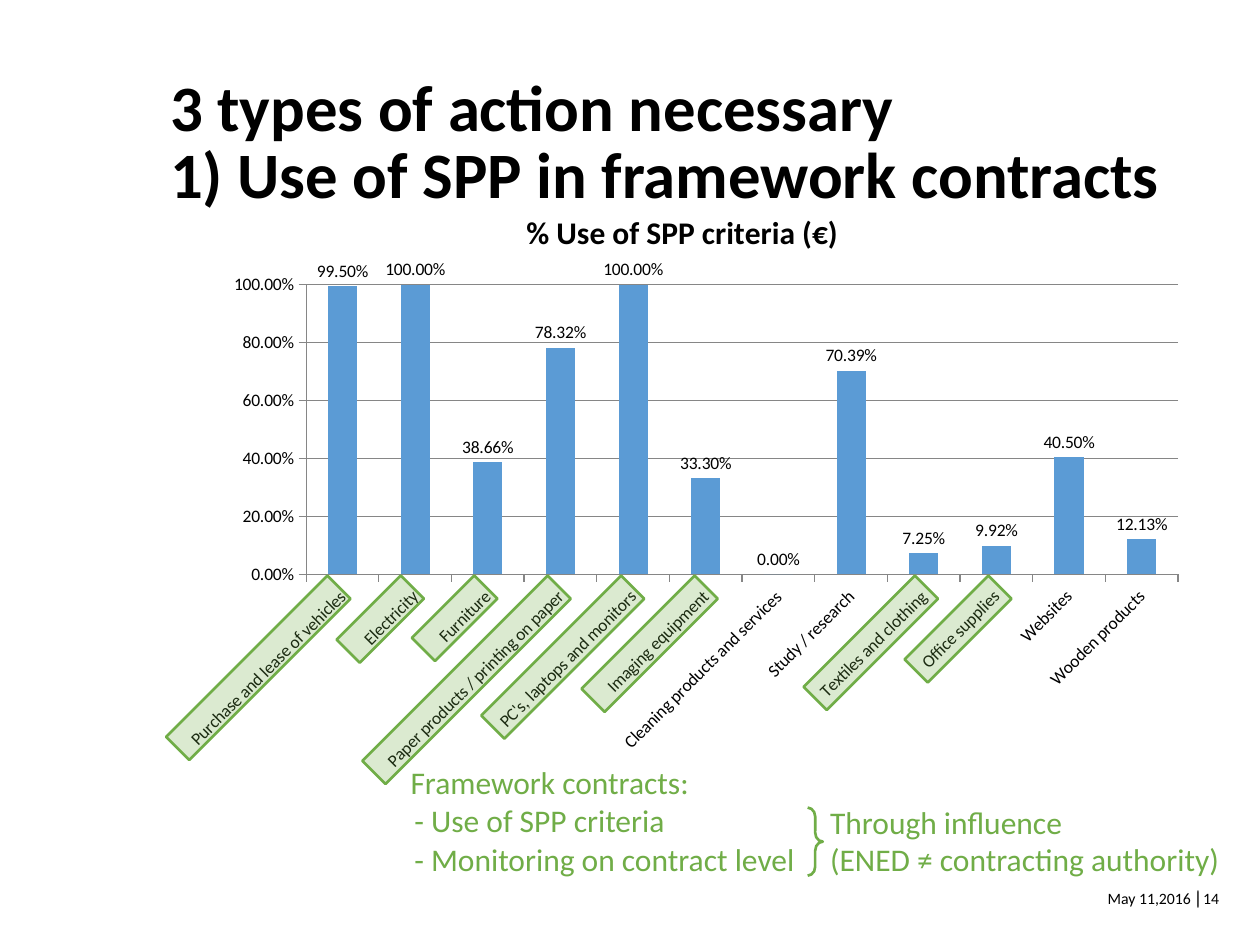
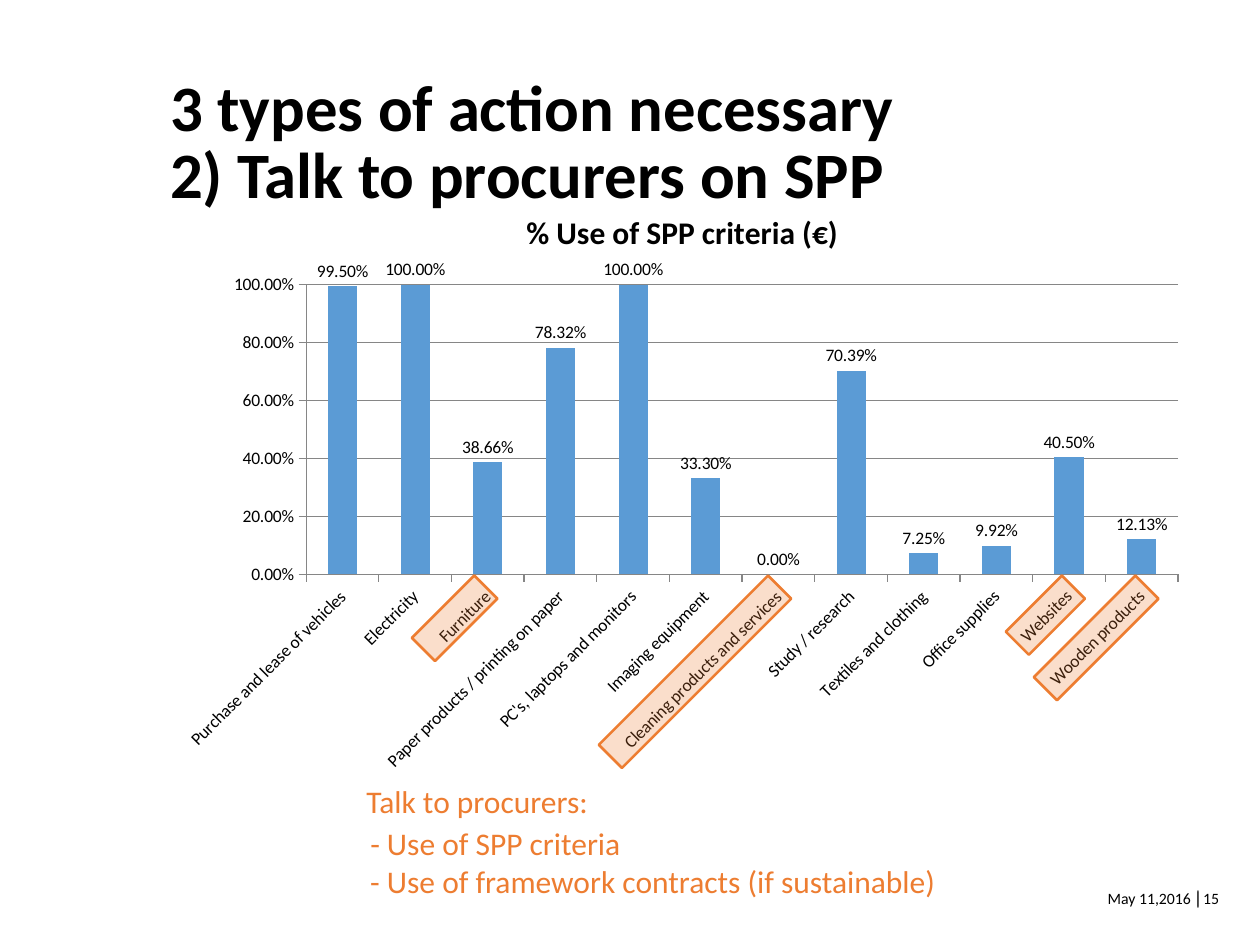
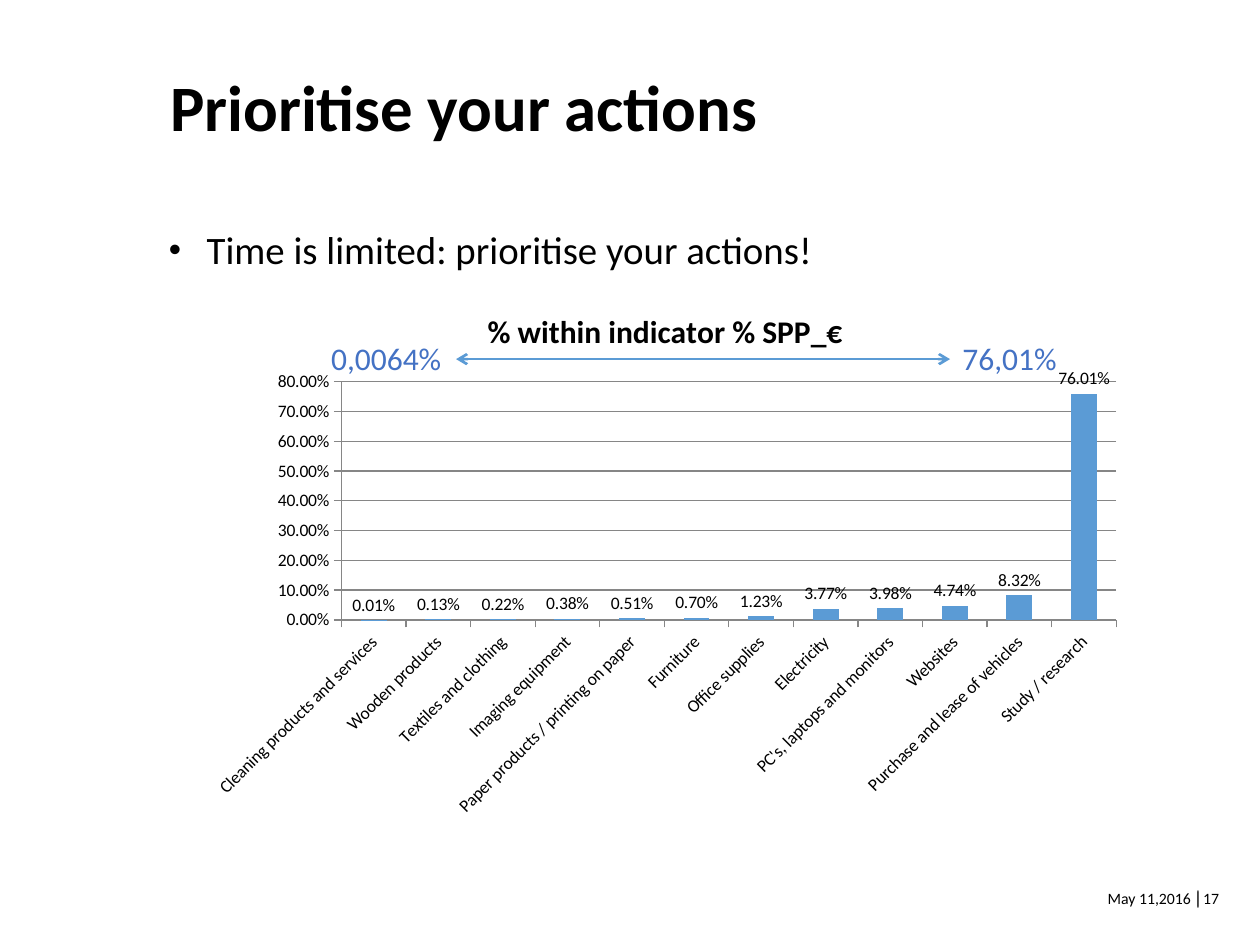
"""Build three slides on sustainable public procurement (SPP) actions."""
from math import sqrt

from lxml import etree
from pptx import Presentation
from pptx.chart.data import CategoryChartData
from pptx.dml.color import RGBColor
from pptx.enum.chart import XL_CHART_TYPE, XL_LABEL_POSITION, XL_TICK_MARK
from pptx.enum.shapes import MSO_CONNECTOR, MSO_SHAPE
from pptx.enum.text import MSO_ANCHOR, MSO_AUTO_SIZE, PP_ALIGN
from pptx.oxml import parse_xml
from pptx.oxml.ns import nsdecls, qn
from pptx.util import Inches, Pt

COLUMNS = XL_CHART_TYPE.COLUMN_CLUSTERED
OUTSIDE_END = XL_LABEL_POSITION.OUTSIDE_END
TICK_OUTSIDE = XL_TICK_MARK.OUTSIDE
STRAIGHT = MSO_CONNECTOR.STRAIGHT
RECTANGLE, RIGHT_BRACE = MSO_SHAPE.RECTANGLE, MSO_SHAPE.RIGHT_BRACE
TOP, MIDDLE = MSO_ANCHOR.TOP, MSO_ANCHOR.MIDDLE
NO_AUTO_SIZE = MSO_AUTO_SIZE.NONE
LEFT, RIGHT = PP_ALIGN.LEFT, PP_ALIGN.RIGHT

BLACK = RGBColor(0x00, 0x00, 0x00)
GRAY = RGBColor(0x86, 0x86, 0x86)
BLUE = RGBColor(0x5B, 0x9B, 0xD5)
DARK_BLUE = RGBColor(0x44, 0x72, 0xC4)
GREEN = RGBColor(0x70, 0xAD, 0x47)
ORANGE = RGBColor(0xED, 0x7D, 0x31)
FONT = "Calibri"

USE_OF_CRITERIA = {
    "Purchase and lease of vehicles": 0.995,
    "Electricity": 1,
    "Furniture": 0.3866,
    "Paper products / printing on paper": 0.7832,
    "PC's, laptops and monitors": 1,
    "Imaging equipment": 0.333,
    "Cleaning products and services": 0,
    "Study / research": 0.7039,
    "Textiles and clothing": 0.0725,
    "Office supplies": 0.0992,
    "Websites": 0.405,
    "Wooden products": 0.1213,
}
SHARE_IN_INDICATOR = {
    "Cleaning products and services": 0.0001,
    "Wooden products": 0.0013,
    "Textiles and clothing": 0.0022,
    "Imaging equipment": 0.0038,
    "Paper products / printing on paper": 0.0051,
    "Furniture": 0.007,
    "Office supplies": 0.0123,
    "Electricity": 0.0377,
    "PC's, laptops and monitors": 0.0398,
    "Websites": 0.0474,
    "Purchase and lease of vehicles": 0.0832,
    "Study / research": 0.7601,
}
USE_CHART = ("% Use of SPP criteria (€)", USE_OF_CRITERIA,
             (1.32, 1.48, 8.19, 4.72), (2.43, 2.26, 6.92, 2.3), 1)
SHARE_CHART = ("% within indicator % SPP_€", SHARE_IN_INDICATOR,
               (1.56, 2.27, 7.44, 4.29), (2.71, 3.03, 6.15, 1.89), None)

FRAMEWORK_LENGTHS = {0: 1.81, 1: 0.72, 2: 0.7, 3: 2.08, 4: 1.57, 5: 1.27, 8: 1.25, 9: 0.94}
PROCURER_LENGTHS = {2: 0.7, 6: 1.9, 10: 0.63, 11: 1.14}
LABEL_START, LABEL_PITCH, LABEL_TOP, LABEL_THICKNESS = 2.69, 0.583, 4.66, 0.26

SLIDES = [
    ("3 types of action necessary\v1) Use of SPP in framework contracts", "14", USE_CHART,
     GREEN, FRAMEWORK_LENGTHS,
     [((3.16, 6.01, 2.49, 0.4), "Framework contracts:"),
      ((3.19, 6.31, 2.21, 0.4), "- Use of SPP criteria"),
      ((3.19, 6.62, 3.26, 0.4), "- Monitoring on contract level"),
      ((6.49, 6.32, 3.33, 0.71), "Through influence\n(ENED ≠ contracting authority)")]),
    ("3 types of action necessary\v2) Talk to procurers on SPP", "15", USE_CHART,
     ORANGE, PROCURER_LENGTHS,
     [((2.81, 6.16, 1.98, 0.71), "Talk to procurers:"),
      ((2.84, 6.49, 2.21, 0.4), "- Use of SPP criteria"),
      ((2.84, 6.79, 4.74, 0.4), "- Use of framework contracts (if sustainable)")]),
    ("Prioritise your actions", "17", SHARE_CHART,
     DARK_BLUE, {},
     [((2.53, 2.64, 1.09, 0.4), "0,0064%"),
      ((7.54, 2.64, 0.96, 0.4), "76,01%")]),
]


def add_text(slide, box, text, size, color, align=LEFT, anchor=TOP, wrap=False):
    frame = slide.shapes.add_textbox(*map(Inches, box)).text_frame
    frame.word_wrap = wrap
    frame.vertical_anchor = anchor
    frame.text = text
    for paragraph in frame.paragraphs:
        paragraph.alignment = align
        paragraph.font.name = FONT
        paragraph.font.size = Pt(size)
        paragraph.font.color.rgb = color


def add_column_chart(slide, name, values, box, plot, maximum):
    data = CategoryChartData(number_format="0.00%")
    data.categories = list(values)
    data.add_series(name, list(values.values()))
    chart = slide.shapes.add_chart(COLUMNS, *map(Inches, box), data).chart
    chart.has_legend = False
    chart.font.name, chart.font.size, chart.font.color.rgb = FONT, Pt(10), BLACK
    chart.has_title = True
    chart.chart_title.text_frame.text = name
    title_font = chart.chart_title.text_frame.paragraphs[0].font
    title_font.name, title_font.size, title_font.bold = FONT, Pt(18), True
    title_font.color.rgb = BLACK

    category_axis, value_axis = chart.category_axis, chart.value_axis
    for axis in (category_axis, value_axis):
        axis.major_tick_mark = TICK_OUTSIDE
        axis.format.line.color.rgb = GRAY
        axis.tick_labels.font.size = Pt(10)
    category_axis._element.find(qn("c:txPr")).find(qn("a:bodyPr")).set("rot", "-2700000")
    value_axis.major_gridlines.format.line.color.rgb = GRAY
    value_axis.tick_labels.number_format = "0.00%"
    value_axis.tick_labels.number_format_is_linked = False
    if maximum:
        value_axis.maximum_scale = maximum
        value_axis.major_unit = 0.2

    columns = chart.plots[0]
    columns.gap_width = 150
    columns.vary_by_categories = False
    columns.series[0].format.fill.solid()
    columns.series[0].format.fill.fore_color.rgb = BLUE
    columns.has_data_labels = True
    labels = columns.data_labels
    labels.show_value = True
    labels.number_format, labels.number_format_is_linked = "0.00%", False
    labels.position = OUTSIDE_END
    labels.font.size = Pt(10)

    left, top, width, height = box
    shares = {"x": (plot[0] - left) / width, "y": (plot[1] - top) / height,
              "w": plot[2] / width, "h": plot[3] / height}
    settings = '<c:layoutTarget val="inner"/><c:xMode val="edge"/><c:yMode val="edge"/>'
    settings += "".join(f'<c:{key} val="{share:.4f}"/>' for key, share in shares.items())
    plot_area = chart._chartSpace.chart.plotArea
    for layout in plot_area.findall(qn("c:layout")):
        plot_area.remove(layout)
    plot_area.insert(0, parse_xml(
        f'<c:layout {nsdecls("c")}><c:manualLayout>{settings}</c:manualLayout></c:layout>'))


presentation = Presentation()
presentation.slide_width, presentation.slide_height = Inches(10), Inches(7.5)
content_layout, title_only_layout = presentation.slide_layouts[1], presentation.slide_layouts[5]

for heading, number, chart_settings, accent, highlight_lengths, notes in SLIDES:
    is_priority = chart_settings is SHARE_CHART
    slide = presentation.slides.add_slide(content_layout if is_priority else title_only_layout)
    title = slide.shapes.title
    title.left, title.top, title.width, title.height = map(Inches, (1.35, 0.62, 8.11, 1.22))
    frame = title.text_frame
    frame.margin_left = frame.margin_top = frame.margin_right = frame.margin_bottom = 0
    frame.vertical_anchor = TOP
    frame.auto_size = NO_AUTO_SIZE
    frame.text = heading
    paragraph = frame.paragraphs[0]
    paragraph.alignment = LEFT
    paragraph.line_spacing = Pt(38)
    paragraph.font.name, paragraph.font.size, paragraph.font.bold = FONT, Pt(37), True
    paragraph.font.color.rgb = BLACK

    add_text(slide, (8.28, 6.93, 1.27, 0.39), "May 11,2016", 9, BLACK, RIGHT, MIDDLE, True)
    add_text(slide, (9.45, 6.93, 0.48, 0.39), number, 9, BLACK, LEFT, MIDDLE, True)
    for anchor in (MIDDLE, TOP):
        add_text(slide, (9.38, 7, 0.27, 0.25), "│", 9, BLACK, LEFT, anchor)
    add_column_chart(slide, *chart_settings)

    for category, length in highlight_lengths.items():
        center_x = LABEL_START + category * LABEL_PITCH - length / 2 / sqrt(2)
        center_y = LABEL_TOP + length / 2 / sqrt(2)
        highlight = slide.shapes.add_shape(
            RECTANGLE, Inches(center_x - length / 2), Inches(center_y - LABEL_THICKNESS / 2),
            Inches(length), Inches(LABEL_THICKNESS))
        highlight.rotation = 315
        highlight.shadow.inherit = False
        highlight.fill.solid()
        highlight.fill.fore_color.rgb = accent
        fill_color = highlight._element.spPr.find(qn("a:solidFill")).find(qn("a:srgbClr"))
        etree.SubElement(fill_color, qn("a:alpha"), val="25000")
        highlight.line.color.rgb = accent
        highlight.line.width = Pt(1.5)

    for box, text in notes:
        add_text(slide, box, text, 18, accent)

    if accent == GREEN:
        brace = slide.shapes.add_shape(RIGHT_BRACE, *map(Inches, (6.41, 6.41, 0.12, 0.54)))
        brace.adjustments[0] = 0.6
        brace.shadow.inherit = False
        brace.fill.background()
        brace.line.color.rgb = accent
        brace.line.width = Pt(1.5)

    if is_priority:
        body = slide.placeholders[1]
        body.left, body.top, body.width, body.height = map(Inches, (1.34, 1.83, 8.11, 3.63))
        frame = body.text_frame
        frame.margin_left = frame.margin_top = frame.margin_right = 0
        frame.margin_bottom = Inches(0.05)
        frame.auto_size = NO_AUTO_SIZE
        frame.text = "Time is limited: prioritise your actions!"
        paragraph = frame.paragraphs[0]
        properties = paragraph._p.get_or_add_pPr()
        properties.set("marL", str(Inches(0.3)))
        properties.set("indent", str(-Inches(0.3)))
        etree.SubElement(properties, qn("a:buSzPct"), val="90000")
        etree.SubElement(properties, qn("a:buChar"), char="•")
        paragraph.line_spacing = 0.9
        paragraph.space_before = Pt(0)
        paragraph.font.name, paragraph.font.size = FONT, Pt(22.2)
        paragraph.font.color.rgb = BLACK

        arrow = slide.shapes.add_connector(STRAIGHT, *map(Inches, (3.62, 2.85, 7.54, 2.85)))
        arrow.line.color.rgb = BLUE
        arrow.line.width = Pt(1.5)
        for end in ("a:headEnd", "a:tailEnd"):
            etree.SubElement(arrow.line._get_or_add_ln(), qn(end), type="arrow")
        etree.SubElement(arrow._element.spPr, qn("a:effectLst"))

presentation.save("out.pptx")
